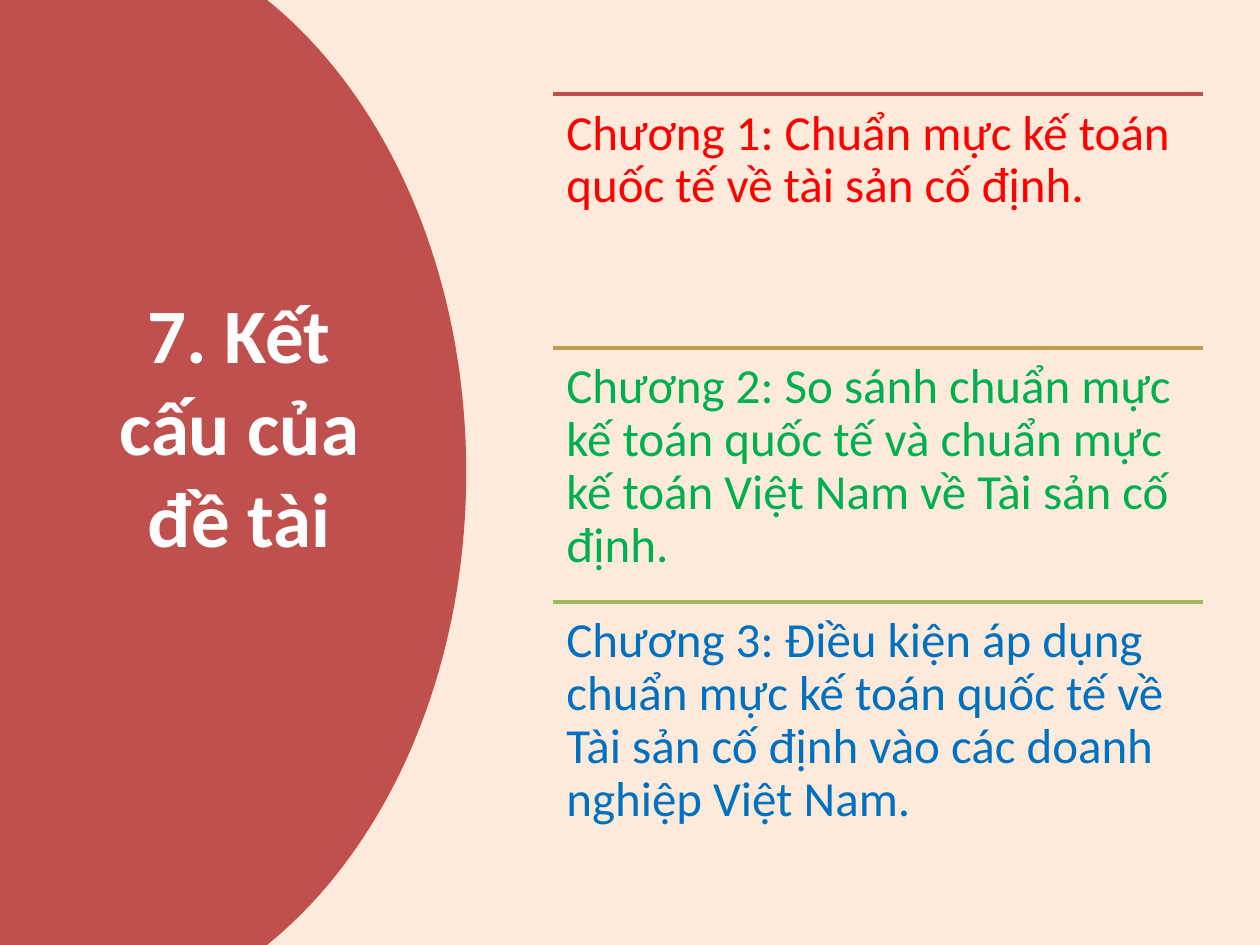
import pptx
import pptx.util
import pptx.dml.color
import pptx.enum.shapes
import pptx.enum.text
import lxml.etree
from dataclasses import dataclass

Cm, Pt = pptx.util.Cm, pptx.util.Pt
RGB = pptx.dml.color.RGBColor.from_string
MSO_ANCHOR, PP_ALIGN = pptx.enum.text.MSO_ANCHOR, pptx.enum.text.PP_ALIGN
DRAWING_NS = "http://schemas.openxmlformats.org/drawingml/2006/main"


@dataclass(frozen=True)
class Theme:
    background: str = "FDEADA"
    panel: str = "C0504D"
    title: str = "FFFFFF"
    font: str = "Calibri"
    title_size: int = 44
    body_size: int = 28
    rule_width: int = 2


THEME = Theme()

# Rule colour, text colour, wording
CHAPTERS = [
    ("C0504D", "FF0000", "Chương 1: Chuẩn mực kế toán quốc tế về tài sản cố định."),
    ("BD9B53", "00B050", "Chương 2: So sánh chuẩn mực kế toán quốc tế và chuẩn mực "
                         "kế toán Việt Nam về Tài sản cố định."),
    ("9BBB59", "0070C0", "Chương 3: Điều kiện áp dụng chuẩn mực kế toán quốc tế về "
                         "Tài sản cố định vào các doanh nghiệp Việt Nam."),
]


def set_all(obj, values):
    for name, value in values.items():
        setattr(obj, name, value)


def add_text(s, box, text, color, font, frame, paragraph):
    """Add a wrapped one-paragraph text box; the dicts hold format values."""
    tf = s.shapes.add_textbox(*map(Cm, box)).text_frame
    set_all(tf, {"word_wrap": True, **frame})
    p = tf.paragraphs[0]
    set_all(p, paragraph)
    r = p.add_run()
    r.text = text
    set_all(r.font, {"name": THEME.font, **font})
    r.font.color.rgb = RGB(color)


def bezier(ends, t):
    """Point at t on the cubic curve through four control points."""
    a, b, c, d = ends
    u = 1 - t
    return tuple(u**3 * i + 3 * u * u * t * j + 3 * u * t * t * k + t**3 * m
                 for i, j, k, m in zip(a, b, c, d))


def add_title_panel(s, left, top, width, height, steps=40):
    """Fill the box with a panel whose right edge bulges, and put the title on it."""
    middle = height / 2
    edge = [(0.573, 0), (0.83, 0.205), (1, 0.576), (1, 1)]
    control = [(left + x * width, top + y * middle) for x, y in edge]
    upper = [bezier(control, i / steps) for i in range(steps + 1)]
    lower = [(x, 2 * (top + middle) - y) for x, y in reversed(upper[:-1])]
    points = [(Cm(x), Cm(y)) for x, y in upper + lower + [(left, top + height)]]

    builder = s.shapes.build_freeform(Cm(left), Cm(top), scale=1.0)
    builder.add_line_segments(points, close=True)
    panel = builder.convert_to_shape()
    panel.shadow.inherit = False
    panel.fill.solid()
    panel.fill.fore_color.rgb = RGB(THEME.panel)
    panel.line.fill.background()

    # The deep bottom margin lifts the title above the middle of the panel.
    add_text(s, (left + 1.75, top + 1.78, 6.15, height - 3.58),
             "7. Kết cấu của đề tài", THEME.title,
             {"size": Pt(THEME.title_size), "bold": True},
             {"vertical_anchor": MSO_ANCHOR.MIDDLE, "margin_bottom": Cm(2.03)},
             {"alignment": PP_ALIGN.CENTER})


def add_rule(s, left, top, width, color):
    rule = s.shapes.add_connector(pptx.enum.shapes.MSO_CONNECTOR.STRAIGHT,
                                  Cm(left), Cm(top), Cm(left + width), Cm(top))
    rule.line.color.rgb = RGB(color)
    rule.line.width = Pt(THEME.rule_width)
    sp_pr = rule.line._get_or_add_ln().getparent()
    lxml.etree.SubElement(sp_pr, f"{{{DRAWING_NS}}}effectLst")


def add_chapters(s, left, top, width, height):
    """Split the box into equal rows, each with a rule above its text."""
    row = height / len(CHAPTERS)
    sides = ("left", "top", "right", "bottom")
    margins = {f"margin_{side}": Cm(0.27) for side in sides}
    for i, (rule_color, text_color, text) in enumerate(CHAPTERS):
        y = top + i * row
        add_rule(s, left, y, width, rule_color)
        add_text(s, (left, y, width, row), text, text_color,
                 {"size": Pt(THEME.body_size)},
                 {"vertical_anchor": MSO_ANCHOR.TOP, **margins},
                 {"alignment": PP_ALIGN.LEFT, "line_spacing": 0.9})


def main():
    prs = pptx.Presentation()
    set_all(prs, {"slide_width": Cm(25.4), "slide_height": Cm(19.05)})
    s = prs.slides.add_slide(prs.slide_layouts[6])
    s.background.fill.solid()
    s.background.fill.fore_color.rgb = RGB(THEME.background)
    add_title_panel(s, 0, 0, 9.4, 19.05)
    add_chapters(s, 11.15, 1.9, 13.1, 15.35)
    prs.save("out.pptx")


if __name__ == "__main__":
    main()
